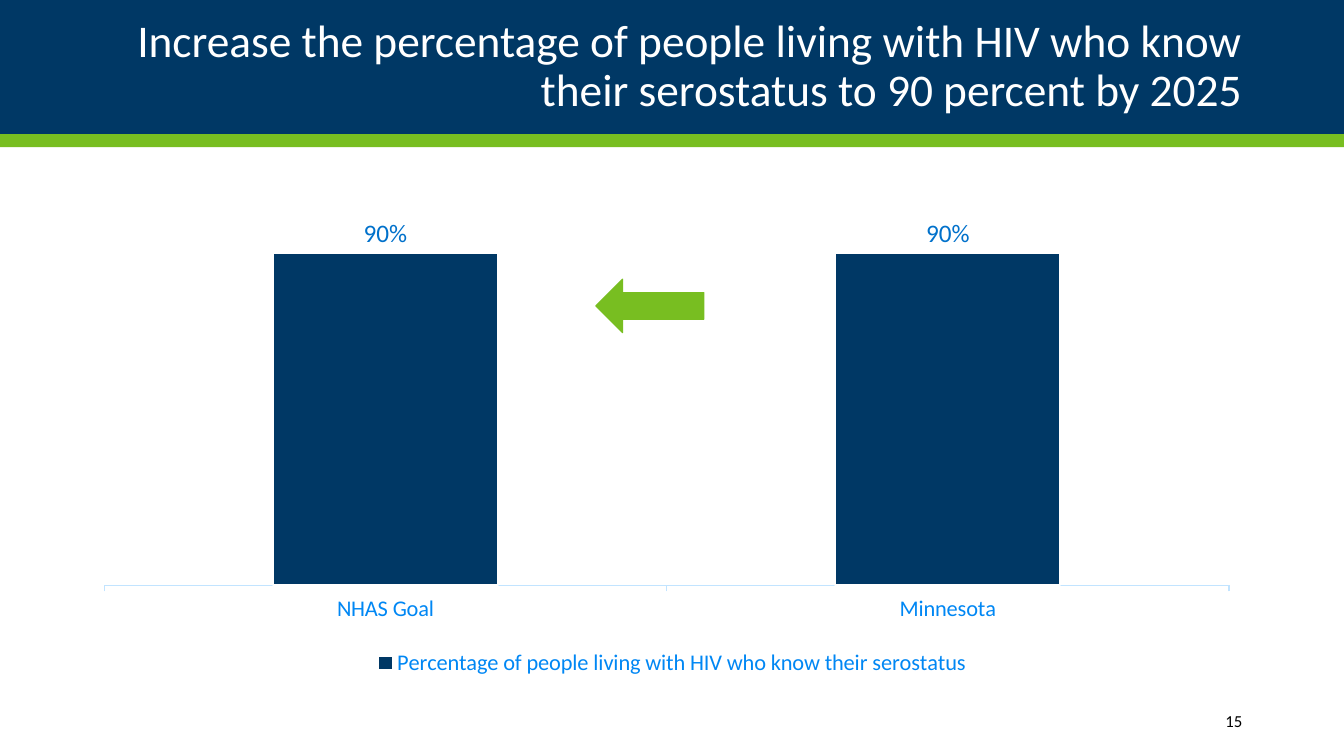
from dataclasses import dataclass

from lxml import etree
from pptx import Presentation
from pptx import util as u
from pptx.chart.data import CategoryChartData
from pptx.dml.color import RGBColor
from pptx.enum import chart as charts, shapes, text

PX = u.Inches(1) // 100


@dataclass(frozen=True)
class Theme:
    font: str = "Calibri"
    navy: str = "003865"
    green: str = "78BE21"
    white: str = "FFFFFF"
    black: str = "000000"
    label_blue: str = "0071CB"
    axis_blue: str = "0087F4"
    axis_line: str = "C2E4FF"
    title_size: float = 32.4
    label_size: int = 18
    axis_size: int = 16
    number_size: int = 12


THEME = Theme()


def box(left, top, width, height):
    return [length * PX for length in (left, top, width, height)]


def set_attributes(target, values):
    for name, value in values.items():
        setattr(target, name, value)


def style_font(font, size, color):
    set_attributes(font, {"name": THEME.font, "size": u.Pt(size), "bold": False})
    font.color.rgb = RGBColor.from_string(color)


def style_line(line, color, width):
    line.color.rgb = RGBColor.from_string(color)
    line.width = u.Pt(width)


def write_text(shape, words, size, color):
    frame = shape.text_frame
    set_attributes(frame, {
        "text": words,
        "word_wrap": True,
        "auto_size": text.MSO_AUTO_SIZE.NONE,
        "vertical_anchor": text.MSO_ANCHOR.MIDDLE,
    })
    paragraph = frame.paragraphs[0]
    paragraph.alignment = text.PP_ALIGN.RIGHT
    style_font(paragraph.runs[0].font, size, color)
    return paragraph


def add_filled_shape(slide, kind, bounds, color):
    shape = slide.shapes.add_shape(kind, *box(*bounds))
    shape.shadow.inherit = False
    shape.fill.solid()
    shape.fill.fore_color.rgb = RGBColor.from_string(color)
    shape.line.fill.background()
    return shape


def add_title(slide, bounds, words):
    title = slide.shapes.title
    set_attributes(title, dict(zip(("left", "top", "width", "height"), box(*bounds))))
    paragraph = write_text(title, words, THEME.title_size, THEME.white)
    paragraph.line_spacing = 0.9
    slide.shapes._spTree.append(title._element)


def set_plot_layout(chart, x, y, w, h):
    plot_area = chart._chartSpace.chart.plotArea
    for old_layout in plot_area.findall("{*}layout"):
        plot_area.remove(old_layout)
    namespace = etree.QName(plot_area).namespace
    layout = etree.Element(f"{{{namespace}}}layout")
    manual = etree.SubElement(layout, f"{{{namespace}}}manualLayout")
    values = {"layoutTarget": "inner", "xMode": "edge", "yMode": "edge",
              "x": x, "y": y, "w": w, "h": h}
    for name, value in values.items():
        etree.SubElement(manual, f"{{{namespace}}}{name}", val=str(value))
    plot_area.insert(0, layout)


def style_axes(chart):
    set_attributes(chart.value_axis, {
        "visible": False,
        "has_major_gridlines": False,
        "minimum_scale": 0,
        "maximum_scale": 1,
    })
    axis = chart.category_axis
    set_attributes(axis, {
        "has_major_gridlines": False,
        "major_tick_mark": charts.XL_TICK_MARK.OUTSIDE,
    })
    style_font(axis.tick_labels.font, THEME.axis_size, THEME.axis_blue)
    style_line(axis.format.line, THEME.axis_line, 0.75)


def add_column_chart(slide, bounds, name, values):
    data = CategoryChartData(number_format="0%")
    data.categories = list(values)
    data.add_series(name, list(values.values()))
    chart = slide.shapes.add_chart(
        charts.XL_CHART_TYPE.COLUMN_CLUSTERED, *box(*bounds), data).chart
    set_attributes(chart, {"has_title": False, "has_legend": True})
    style_font(chart.font, THEME.axis_size, THEME.axis_blue)
    style_axes(chart)

    set_attributes(chart.legend, {
        "position": charts.XL_LEGEND_POSITION.BOTTOM,
        "include_in_layout": False,
    })
    style_font(chart.legend.font, THEME.axis_size, THEME.axis_blue)

    plot = chart.plots[0]
    set_attributes(plot, {"gap_width": 150, "vary_by_categories": False})
    series = plot.series[0]
    series.format.fill.solid()
    series.format.fill.fore_color.rgb = RGBColor.from_string(THEME.navy)
    style_line(series.format.line, THEME.white, 1.5)
    set_attributes(series.data_labels, {
        "show_value": True,
        "position": charts.XL_LABEL_POSITION.OUTSIDE_END,
        "number_format": "0%",
        "number_format_is_linked": False,
    })
    style_font(series.data_labels.font, THEME.label_size, THEME.label_blue)
    set_plot_layout(chart, 0.01, 0.03, 0.97, 0.77)


def add_slide_number(slide, bounds, number):
    shape = slide.shapes.add_textbox(*box(*bounds))
    write_text(shape, number, THEME.number_size, THEME.black)


def add_arrow(slide, bounds):
    arrow = add_filled_shape(slide, shapes.MSO_SHAPE.RIGHT_ARROW, bounds, THEME.green)
    arrow.rotation = 180
    style_line(arrow.line, THEME.green, 0.85)


def main():
    presentation = Presentation()
    set_attributes(presentation, {"slide_width": 1333 * PX, "slide_height": 750 * PX})
    slide = presentation.slides.add_slide(presentation.slide_layouts[5])

    rectangle = shapes.MSO_SHAPE.RECTANGLE
    add_filled_shape(slide, rectangle, (0, 0, 1333, 133), THEME.navy)
    add_filled_shape(slide, rectangle, (0, 133, 1333, 13), THEME.green)
    add_title(slide, (92, 17, 1150, 100),
              "Increase the percentage of people living with HIV who know "
              "their serostatus to 90 percent by 2025")
    add_column_chart(slide, (92, 200, 1150, 476),
                     "Percentage of people living with HIV who know their serostatus",
                     {"NHAS Goal": 0.9, "Minnesota": 0.9})
    add_slide_number(slide, (1082, 695, 160, 40), "15")
    add_arrow(slide, (591, 277, 107, 53))

    presentation.save("out.pptx")


if __name__ == "__main__":
    main()
